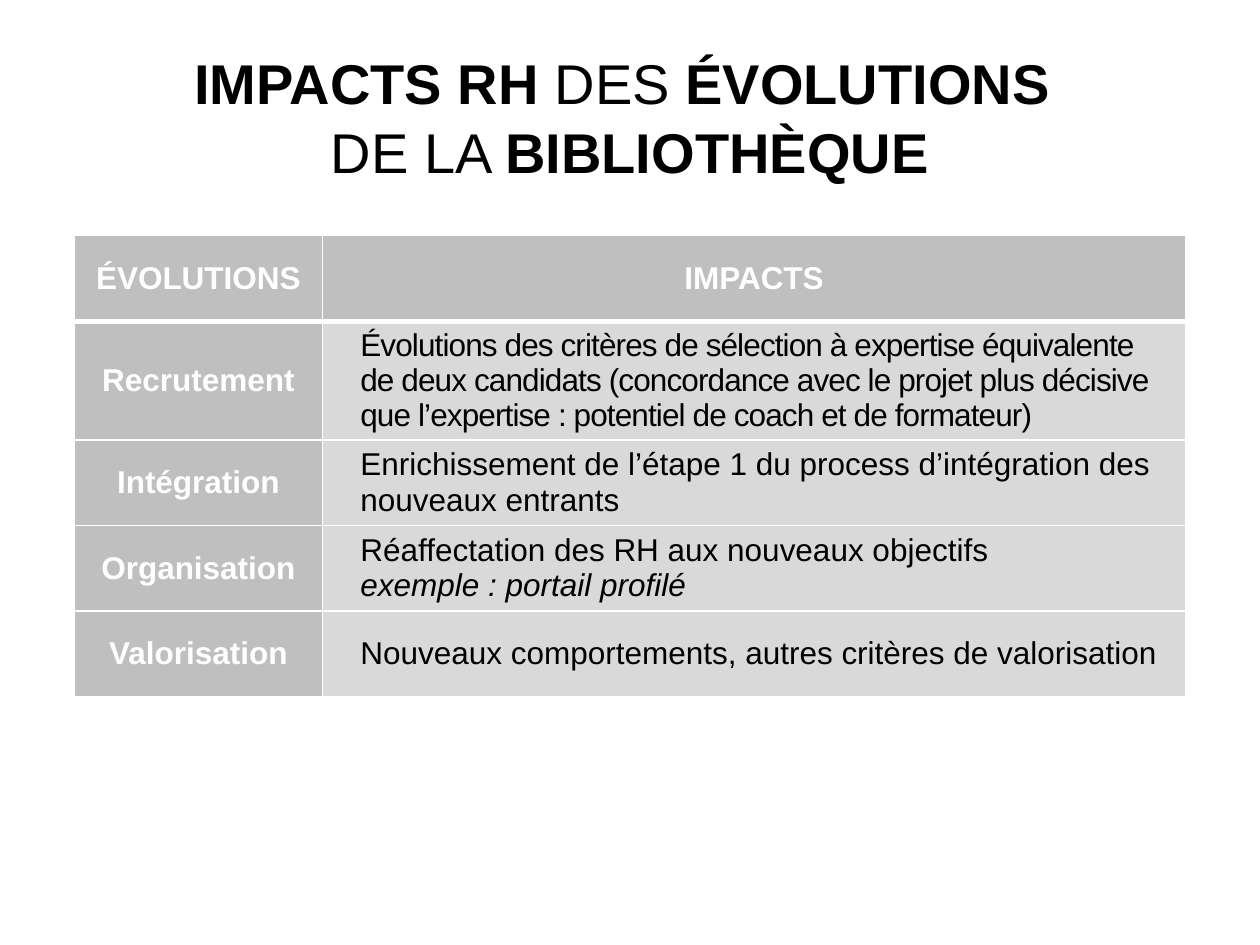
from lxml import etree
from pptx import Presentation
from pptx.dml.color import RGBColor
from pptx.enum import text
from pptx.oxml import ns
from pptx.util import Inches, Pt

WHITE = RGBColor(0xFF, 0xFF, 0xFF)
BLACK = RGBColor(0, 0, 0)
HEADER_GREY = RGBColor(0xBF, 0xBF, 0xBF)
BODY_GREY = RGBColor(0xD9, 0xD9, 0xD9)

TITLE_LINES = [
    [("IMPACTS RH ", True), ("DES", False), (" ÉVOLUTIONS ", True)],
    [("DE LA ", False), ("BIBLIOTHÈQUE", True)],
]
ROWS = [
    ("Recrutement",
     "Évolutions des critères de sélection à expertise équivalente de deux "
     "candidats (concordance avec le projet plus décisive que l’expertise : "
     "potentiel de coach et de formateur)", None),
    ("Intégration",
     "Enrichissement de l’étape 1 du process d’intégration des nouveaux entrants", None),
    ("Organisation",
     "Réaffectation des RH aux nouveaux objectifs", "exemple : portail profilé"),
    ("Valorisation",
     "Nouveaux comportements, autres critères de valorisation", None),
]


def add_text(paragraph, content, size=18, color=BLACK, bold=False, italic=False,
             spacing=None):
    """Append a run; spacing is the letter spacing in points."""
    run = paragraph.add_run()
    run.text = content
    run.font.name = "Arial"
    run.font.size = Pt(size)
    run.font.color.rgb = color
    run.font.bold = bold
    run.font.italic = italic
    if spacing is not None:
        run.font._element.set("spc", str(int(spacing * 100)))


def set_borders(cell, bottom=1, top=1):
    properties = cell._tc.get_or_add_tcPr()
    widths = {"lnL": 1, "lnR": 1, "lnT": top, "lnB": bottom}
    for position, (side, width) in enumerate(widths.items()):
        line = etree.Element(ns.qn(f"a:{side}"), w=str(Pt(width)))
        fill = etree.SubElement(line, ns.qn("a:solidFill"))
        etree.SubElement(fill, ns.qn("a:srgbClr"), val=str(WHITE))
        properties.insert(position, line)


def style_cell(cell, color, **borders):
    cell.fill.solid()
    cell.fill.fore_color.rgb = color
    cell.vertical_anchor = text.MSO_ANCHOR.MIDDLE
    set_borders(cell, **borders)


def fill_heading_cell(cell, label, **borders):
    style_cell(cell, HEADER_GREY, **borders)
    paragraph = cell.text_frame.paragraphs[0]
    paragraph.alignment = text.PP_ALIGN.CENTER
    add_text(paragraph, label, color=WHITE, bold=True)


def fill_impact_cell(cell, impact, example, spacing, **borders):
    style_cell(cell, BODY_GREY, **borders)
    paragraph = cell.text_frame.paragraphs[0]
    paragraph._p.get_or_add_pPr().set("marL", str(Inches(0.2)))
    add_text(paragraph, impact, spacing=spacing)
    if example:
        paragraph.add_line_break()
        add_text(paragraph, example, italic=True)


def add_title(slide, left, top, width, height):
    frame = slide.shapes.add_textbox(left, top, width, height).text_frame
    frame.word_wrap = True
    frame.vertical_anchor = text.MSO_ANCHOR.MIDDLE
    for index, line in enumerate(TITLE_LINES):
        paragraph = frame.add_paragraph() if index else frame.paragraphs[0]
        paragraph.alignment = text.PP_ALIGN.CENTER
        if index:
            paragraph.space_before = Pt(1.5)
        for content, bold in line:
            add_text(paragraph, content, size=32, bold=bold)


def add_impacts_table(slide, left, top, width, height):
    table = slide.shapes.add_table(len(ROWS) + 1, 2, left, top, width, height).table
    table.columns[0].width = Inches(1.97)
    table.columns[1].width = width - Inches(1.97)
    for column, label in enumerate(("ÉVOLUTIONS", "IMPACTS")):
        fill_heading_cell(table.cell(0, column), label, bottom=3)
    for row, (evolution, impact, example) in enumerate(ROWS, start=1):
        top_width = 3 if row == 1 else 1
        fill_heading_cell(table.cell(row, 0), evolution, top=top_width)
        spacing = -0.5 if evolution == "Recrutement" else None
        fill_impact_cell(table.cell(row, 1), impact, example, spacing, top=top_width)


def main():
    presentation = Presentation()
    presentation.slide_width = Inches(10)
    presentation.slide_height = Inches(7.5)
    slide = presentation.slides.add_slide(presentation.slide_layouts[6])
    add_impacts_table(slide, Inches(0.59), Inches(1.87), Inches(8.82), Inches(3.4))
    add_title(slide, Inches(0), Inches(0.3), Inches(10), Inches(1.25))
    presentation.save("out.pptx")


if __name__ == "__main__":
    main()
